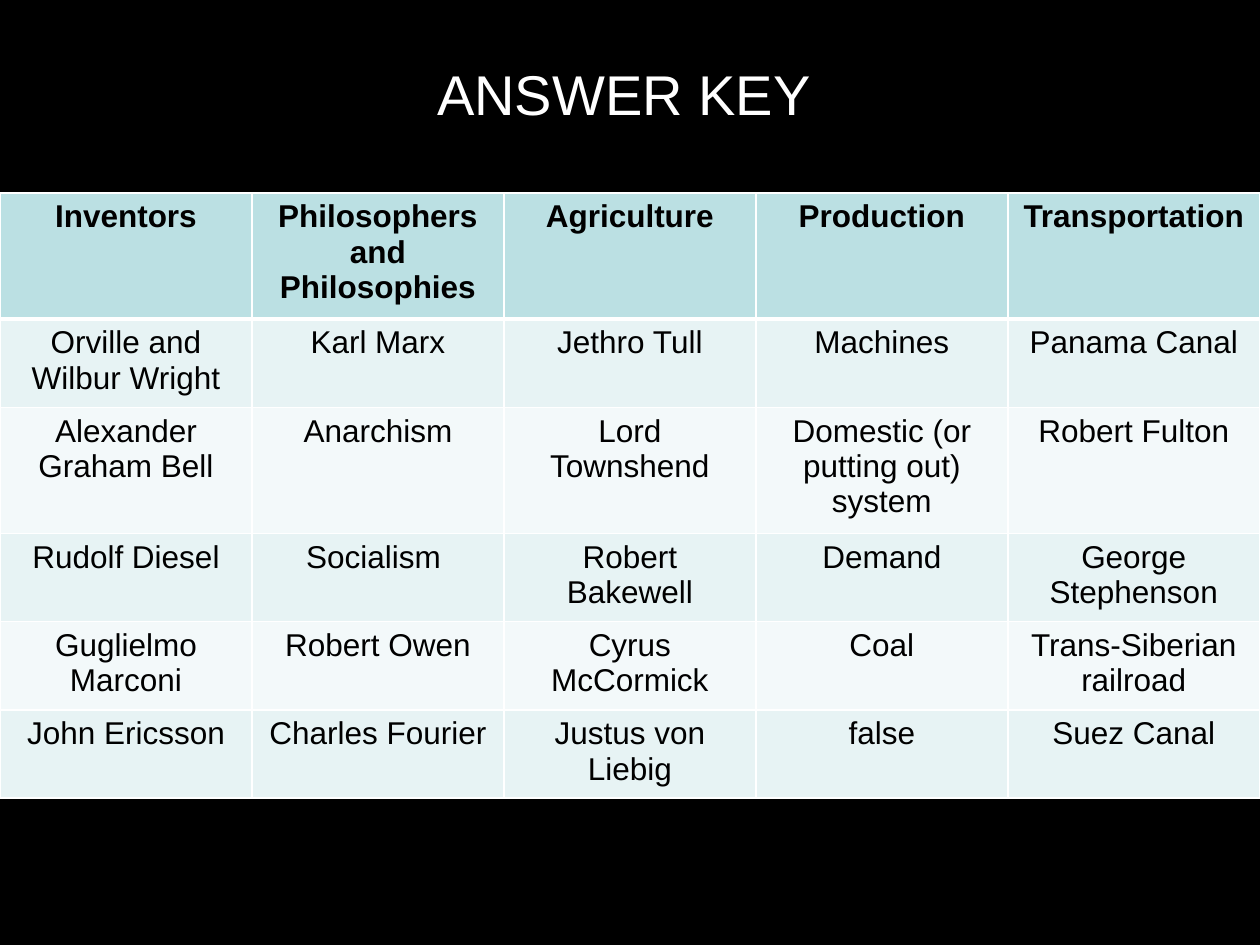
from dataclasses import dataclass

from lxml import etree
from pptx import Presentation
from pptx.dml.color import RGBColor
from pptx.enum.text import MSO_ANCHOR, MSO_AUTO_SIZE, PP_ALIGN
from pptx.oxml.ns import qn
from pptx.util import Pt

CENTER = PP_ALIGN.CENTER
TOP = MSO_ANCHOR.TOP
GROW = MSO_AUTO_SIZE.SHAPE_TO_FIT_TEXT
PX = 914400 // 126


@dataclass(frozen=True)
class Theme:
    font: str = "Arial"
    back: str = "000000"
    ink: str = "000000"
    line: str = "FFFFFF"
    title: str = "FFFFFF"
    head: str = "BBE0E3"
    bands: tuple = ("E7F3F4", "F3F9FA")
    big: int = 32
    body: int = 18
    thin: int = 1
    thick: int = 3


theme = Theme()


def write(para, text, size, color, bold=False):
    para.alignment = CENTER
    run = para.add_run()
    run.text = text
    run.font.name = theme.font
    run.font.size = Pt(size)
    run.font.bold = bold
    run.font.color.rgb = RGBColor.from_string(color)


def border(cell, side, width):
    props = cell._tc.get_or_add_tcPr()
    line = etree.SubElement(props, qn(f"a:ln{side}"), w=str(Pt(width)))
    fill = etree.SubElement(line, qn("a:solidFill"))
    etree.SubElement(fill, qn("a:srgbClr"), val=theme.line)


deck = Presentation()
deck.slide_width = 1260 * PX
deck.slide_height = 945 * PX
slide = deck.slides.add_slide(deck.slide_layouts[5])
slide.background.fill.solid()
slide.background.fill.fore_color.rgb = RGBColor.from_string(theme.back)

title = slide.shapes.title
title.left, title.top = 199 * PX, 53 * PX
title.width, title.height = 850 * PX, 81 * PX
frame = title.text_frame
frame.word_wrap = True
frame.auto_size = GROW
frame.vertical_anchor = TOP
write(frame.paragraphs[0], "ANSWER KEY", theme.big, theme.title)

rows = [
    ["Inventors", "Philosophers and Philosophies", "Agriculture",
     "Production", "Transportation"],
    ["Orville and Wilbur Wright", "Karl Marx", "Jethro Tull",
     "Machines", "Panama Canal"],
    ["Alexander Graham Bell", "Anarchism", "Lord Townshend",
     "Domestic (or putting out) system", "Robert Fulton"],
    ["Rudolf Diesel", "Socialism ", "Robert Bakewell",
     "Demand", "George Stephenson"],
    ["Guglielmo Marconi", "Robert Owen", "Cyrus McCormick",
     "Coal", "Trans-Siberian railroad"],
    ["John Ericsson", "Charles Fourier", "Justus von Liebig",
     "false", "Suez Canal"],
]
table = slide.shapes.add_table(
    len(rows), len(rows[0]), 0, 193 * PX, 1260 * PX, 531 * PX).table
for col in table.columns:
    col.width = 252 * PX

for r, names in enumerate(rows):
    table.rows[r].height = (91 if r == 0 else 88) * PX
    shade = theme.head if r == 0 else theme.bands[(r - 1) % 2]
    above = theme.thick if r == 1 else theme.thin
    below = theme.thick if r == 0 else theme.thin
    for c, name in enumerate(names):
        cell = table.cell(r, c)
        for side, width in zip("LRTB", (theme.thin, theme.thin, above, below)):
            border(cell, side, width)
        cell.fill.solid()
        cell.fill.fore_color.rgb = RGBColor.from_string(shade)
        write(cell.text_frame.paragraphs[0], name, theme.body, theme.ink, r == 0)

deck.save("out.pptx")
